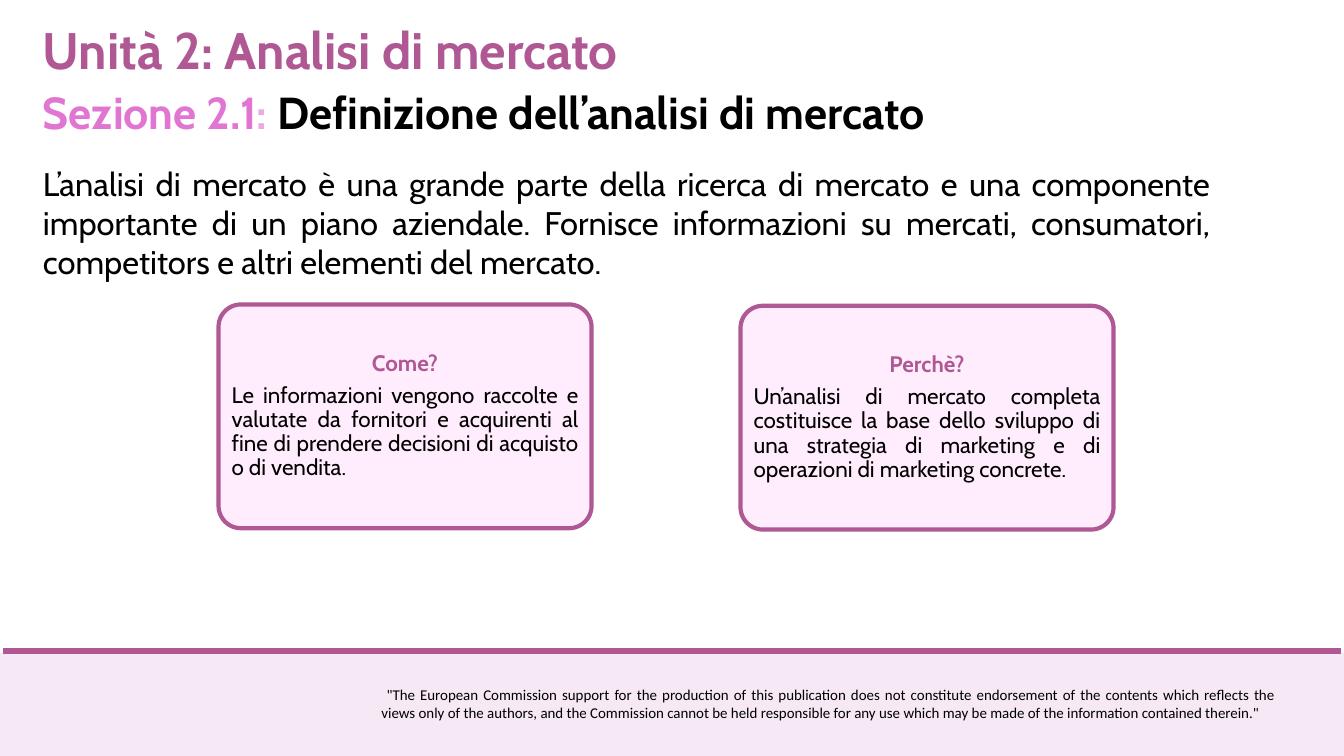
from dataclasses import dataclass

from lxml.etree import SubElement
from pptx import Presentation
from pptx.dml.color import RGBColor
from pptx.enum.shapes import MSO_CONNECTOR, MSO_SHAPE
from pptx.enum.text import MSO_ANCHOR as Anchor, MSO_AUTO_SIZE as AutoSize, PP_ALIGN as Align
from pptx.oxml.ns import qn
from pptx.shapes.base import BaseShape
from pptx.shapes.shapetree import SlideShapes
from pptx.text.text import TextFrame, _Paragraph as Paragraph
from pptx.util import Cm, Pt

PLUM = RGBColor(0xB0, 0x58, 0x94)
ORCHID = RGBColor(0xE0, 0x76, 0xD1)
PALE_ORCHID = RGBColor(0xEC, 0xAA, 0xE3)
CARD_PINK = RGBColor(0xFF, 0xEC, 0xFC)
FOOTER_PINK = RGBColor(0xF6, 0xE9, 0xF5)
BLACK = RGBColor(0, 0, 0)

SLIDE_WIDTH, SLIDE_HEIGHT = 50.8, 28.58
MARGIN = 1.37


@dataclass(frozen=True)
class Span:
    text: str
    size: float
    color: RGBColor
    bold: bool = False
    font: str = "Cabin"


@dataclass(frozen=True)
class Card:
    left: float
    top: float
    question: str
    answer: str


CARDS = (
    Card(8.26, 11.51, "Come?",
         "Le informazioni vengono raccolte e valutate da fornitori e acquirenti "
         "al fine di prendere decisioni di acquisto o di vendita."),
    Card(27.99, 11.56, "Perchè?",
         "Un’analisi di mercato completa costituisce la base dello sviluppo di "
         "una strategia di marketing e di operazioni di marketing concrete."),
)


def apply(target: object, values: dict) -> None:
    for name, value in values.items():
        setattr(target, name, value)


def place(shape: BaseShape, left: float, top: float, width: float, height: float) -> None:
    apply(shape, {"left": Cm(left), "top": Cm(top), "width": Cm(width), "height": Cm(height)})


def write(paragraph: Paragraph, spans: tuple[Span, ...], **layout: object) -> None:
    apply(paragraph, layout)
    for span in spans:
        run = paragraph.add_run()
        run.text = span.text
        apply(run.font, {"name": span.font, "size": Pt(span.size), "bold": span.bold})
        run.font.color.rgb = span.color


def prepare(frame: TextFrame, anchor: Anchor = Anchor.TOP) -> None:
    apply(frame, {"word_wrap": True, "auto_size": AutoSize.NONE, "vertical_anchor": anchor})


def draw_text(shapes: SlideShapes, left: float, top: float, width: float, height: float,
              spans: tuple[Span, ...], align: Align) -> None:
    frame = shapes.add_textbox(Cm(left), Cm(top), Cm(width), Cm(height)).text_frame
    prepare(frame)
    write(frame.paragraphs[0], spans, alignment=align)


def draw_card(shapes: SlideShapes, card: Card) -> None:
    panel = shapes.add_shape(MSO_SHAPE.ROUNDED_RECTANGLE,
                             Cm(card.left), Cm(card.top), Cm(14.1), Cm(8.46))
    panel.adjustments[0] = 0.1
    panel.shadow.inherit = False
    panel.fill.solid()
    panel.fill.fore_color.rgb = CARD_PINK
    panel.line.color.rgb = PLUM
    panel.line.width = Pt(4.5)
    frame = panel.text_frame
    prepare(frame, Anchor.MIDDLE)
    apply(frame, {f"margin_{side}": Cm(0.25) for side in ("left", "top", "right", "bottom")})
    spacing = {"line_spacing": 0.9, "space_after": Pt(8.4)}
    write(frame.paragraphs[0], (Span(card.question, 24, PLUM, True),),
          alignment=Align.CENTER, **spacing)
    write(frame.add_paragraph(), (Span(card.answer, 24, BLACK),),
          alignment=Align.JUSTIFY, **spacing)


def draw_footer(shapes: SlideShapes) -> None:
    band_top = 24.69
    band = shapes.add_shape(MSO_SHAPE.RECTANGLE, 0, Cm(band_top),
                            Cm(SLIDE_WIDTH), Cm(SLIDE_HEIGHT - band_top))
    band.shadow.inherit = False
    band.fill.solid()
    band.fill.fore_color.rgb = FOOTER_PINK
    band.line.fill.background()
    rule = shapes.add_connector(MSO_CONNECTOR.STRAIGHT, Cm(0.12), Cm(24.61),
                                Cm(SLIDE_WIDTH - 0.12), Cm(24.61))
    rule.line.color.rgb = PLUM
    rule.line.width = Pt(6.75)
    SubElement(rule._element.spPr, qn("a:effectLst"))
    disclaimer = (
        ' "The European Commission support for the production of this publication does not '
        "constitute endorsement of the contents which reflects the views only of the authors, "
        "and the Commission cannot be held responsible for any use which may be made of the "
        'information contained therein."'
    )
    draw_text(shapes, 14.17, 25.78, 34.29, 1.63,
              (Span(disclaimer, 16, BLACK, font="Calibri"),), Align.JUSTIFY)


def main() -> None:
    deck = Presentation()
    apply(deck, {"slide_width": Cm(SLIDE_WIDTH), "slide_height": Cm(SLIDE_HEIGHT)})
    slide = deck.slides.add_slide(deck.slide_layouts[1])
    shapes = slide.shapes
    draw_footer(shapes)

    unit = shapes.title
    place(unit, MARGIN, 0.56, 26.57, 2.62)
    prepare(unit.text_frame)
    write(unit.text_frame.paragraphs[0],
          (Span("Unità 2: Analisi di mercato", 55, PLUM, True),), alignment=Align.LEFT)

    section = (
        Span("Sezione 2.1", 48, ORCHID, True),
        Span(": ", 48, PALE_ORCHID, True),
        Span("Definizione dell’analisi di mercato", 48, BLACK, True),
    )
    draw_text(shapes, MARGIN, 3.07, 37.77, 2.31, section, Align.LEFT)

    definition = slide.placeholders[1]
    place(definition, MARGIN, 6.07, 44.65, 4.75)
    prepare(definition.text_frame)
    paragraph = definition.text_frame.paragraphs[0]
    properties = paragraph._p.get_or_add_pPr()
    properties.set("marL", "0")
    properties.set("indent", "0")
    SubElement(properties, qn("a:buNone"))
    write(paragraph, (Span(
        "L’analisi di mercato è una grande parte della ricerca di mercato e una componente "
        "importante di un piano aziendale. Fornisce informazioni su mercati, consumatori, "
        "competitors e altri elementi del mercato.", 35, BLACK),),
        alignment=Align.JUSTIFY, space_before=Pt(0))

    for card in CARDS:
        draw_card(shapes, card)
    deck.save("out.pptx")


if __name__ == "__main__":
    main()
